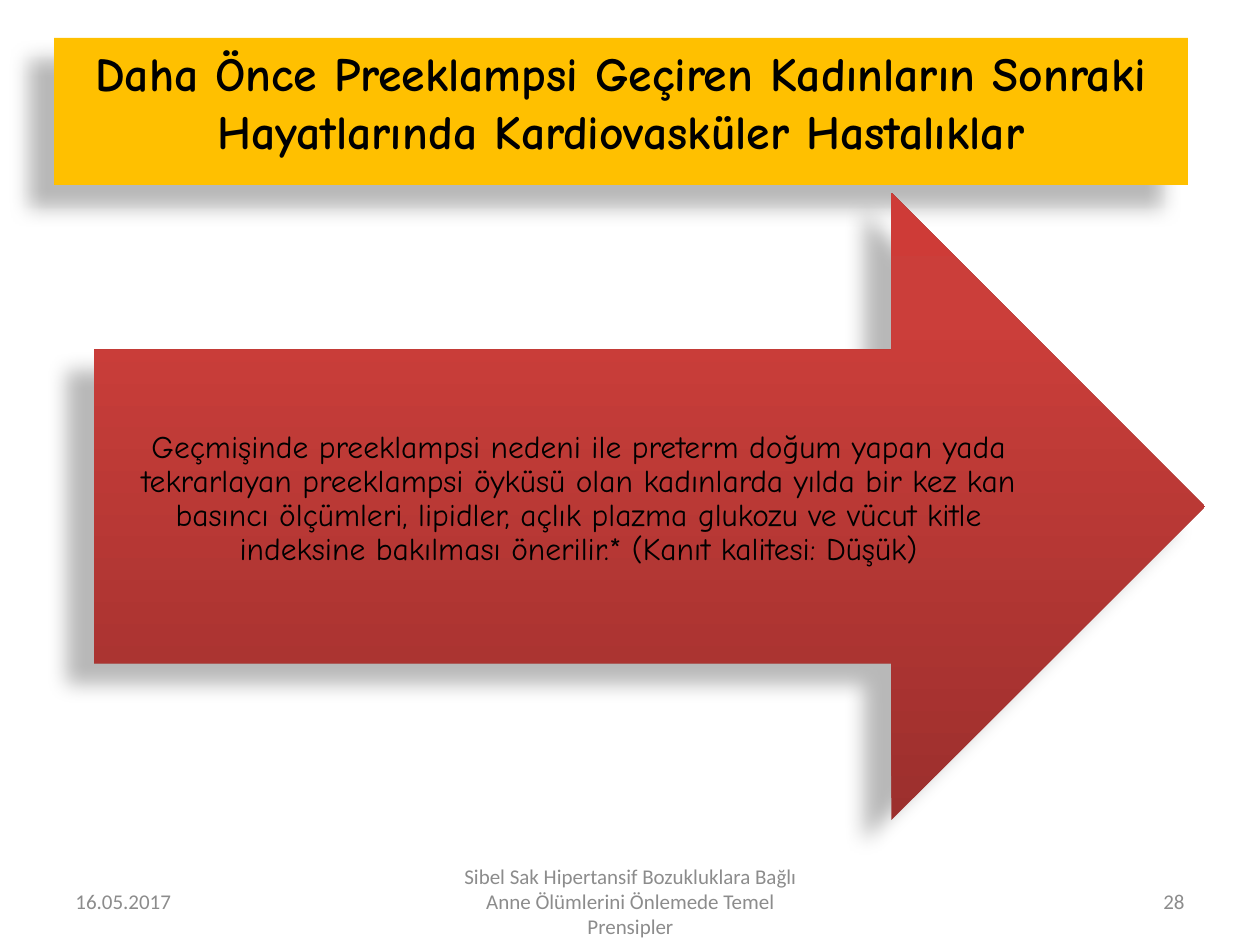
import pptx
import pptx.util
import pptx.dml.color
import pptx.enum.shapes
import pptx.enum.text
import pptx.oxml
import pptx.oxml.ns

ALIGN = pptx.enum.text.PP_ALIGN
ANCHOR = pptx.enum.text.MSO_ANCHOR

# Content
TITLE = ("Daha Önce Preeklampsi Geçiren Kadınların Sonraki "
         "Hayatlarında Kardiovasküler Hastalıklar")
ADVICE = ("Geçmişinde preeklampsi nedeni ile preterm doğum yapan yada "
          "tekrarlayan preeklampsi öyküsü olan kadınlarda yılda bir kez kan "
          "basıncı ölçümleri, lipidler, açlık plazma glukozu ve vücut kitle "
          "indeksine bakılması önerilir.* (Kanıt kalitesi: Düşük)")
FOOTERS = [  # text, left, width, alignment
    ("16.05.2017", 63, 294, ALIGN.LEFT),
    ("Sibel Sak Hipertansif Bozukluklara Bağlı Anne Ölümlerini Önlemede "
     "Temel Prensipler", 431, 399, ALIGN.CENTER),
    ("28", 903, 294, ALIGN.RIGHT),
]

# Places in px: left, top, width, height
SLIDE_SIZE = (1260, 945)
TITLE_BOX = (54, 38, 1134, 147)
ARROW_BOX = (94, 193, 1111, 627)
ADVICE_BOX = (123, 373, 911, 253)
FOOTER_TOP, FOOTER_HEIGHT = 876, 50
ADVICE_INSET = 25

THEME = {
    "heading_font": "Comic Neue", "footer_font": "Calibri",
    "title_size": 27.2, "advice_size": 18, "footer_size": 12,
    "text": "000000", "footer": "8C8C8C", "title_fill": "FFC000",
    "arrow_stops": [(0, "9C2F2D"), (80, "CB3E3A"), (100, "CE3B37")],
    "shadow": {"color": "000000", "alpha": 28, "blur": 11.8,
               "distance": 19.7, "angle": 141},
}


def px(value):
    return pptx.util.Emu(round(value * 914400 / 126))


def rgb(color):
    return pptx.dml.color.RGBColor.from_string(color)


def place(shape, box):
    shape.left, shape.top, shape.width, shape.height = map(px, box)


def write(shape, text, font, size, color, align, anchor, bold=False):
    frame = shape.text_frame
    frame.text = text
    frame.word_wrap = True
    frame.auto_size = pptx.enum.text.MSO_AUTO_SIZE.NONE
    frame.vertical_anchor = anchor
    paragraph = frame.paragraphs[0]
    paragraph.alignment = align
    run_font = paragraph.runs[0].font
    run_font.name, run_font.size, run_font.bold = font, pptx.util.Pt(size), bold
    run_font.color.rgb = rgb(color)
    return frame


def add_shadow(shape):
    shadow = THEME["shadow"]
    shape.shadow.inherit = False
    effects = shape._element.spPr.find(pptx.oxml.ns.qn("a:effectLst"))
    effects.append(pptx.oxml.parse_xml(
        f'<a:outerShdw {pptx.oxml.ns.nsdecls("a")} '
        f'blurRad="{pptx.util.Pt(shadow["blur"])}" '
        f'dist="{pptx.util.Pt(shadow["distance"])}" '
        f'dir="{shadow["angle"] * 60000}" algn="ctr" rotWithShape="0">'
        f'<a:srgbClr val="{shadow["color"]}">'
        f'<a:alpha val="{shadow["alpha"] * 1000}"/></a:srgbClr></a:outerShdw>'))


def fill_gradient(shape, stops):
    shape.fill.gradient()
    shape.fill.gradient_angle = 90  # first stop at the bottom
    stop_list = shape._element.spPr.find(".//" + pptx.oxml.ns.qn("a:gsLst"))
    for stop in list(stop_list):
        stop_list.remove(stop)
    for position, color in stops:
        stop_list.append(pptx.oxml.parse_xml(
            f'<a:gs {pptx.oxml.ns.nsdecls("a")} pos="{position * 1000}">'
            f'<a:srgbClr val="{color}"/></a:gs>'))


def main():
    presentation = pptx.Presentation()
    presentation.slide_width, presentation.slide_height = map(px, SLIDE_SIZE)
    slide = presentation.slides.add_slide(presentation.slide_layouts[5])

    # Title band
    title = slide.shapes.title
    place(title, TITLE_BOX)
    title.fill.solid()
    title.fill.fore_color.rgb = rgb(THEME["title_fill"])
    title.line.fill.background()
    add_shadow(title)
    write(title, TITLE, THEME["heading_font"], THEME["title_size"],
          THEME["text"], ALIGN.CENTER, ANCHOR.TOP, bold=True)

    # Arrow
    arrow = slide.shapes.add_shape(
        pptx.enum.shapes.MSO_SHAPE.RIGHT_ARROW, *map(px, ARROW_BOX))
    fill_gradient(arrow, THEME["arrow_stops"])
    arrow.line.fill.background()
    add_shadow(arrow)

    # Advice on the arrow
    advice = slide.shapes.add_textbox(*map(px, ADVICE_BOX))
    frame = write(advice, ADVICE, THEME["heading_font"], THEME["advice_size"],
                  THEME["text"], ALIGN.CENTER, ANCHOR.MIDDLE)
    frame.margin_left = frame.margin_right = 0
    frame.margin_top = frame.margin_bottom = px(ADVICE_INSET)
    frame.paragraphs[0].line_spacing = 0.9

    # Footer row
    for text, left, width, align in FOOTERS:
        box = slide.shapes.add_textbox(
            *map(px, (left, FOOTER_TOP, width, FOOTER_HEIGHT)))
        write(box, text, THEME["footer_font"], THEME["footer_size"],
              THEME["footer"], align, ANCHOR.MIDDLE)

    presentation.save("out.pptx")


if __name__ == "__main__":
    main()
